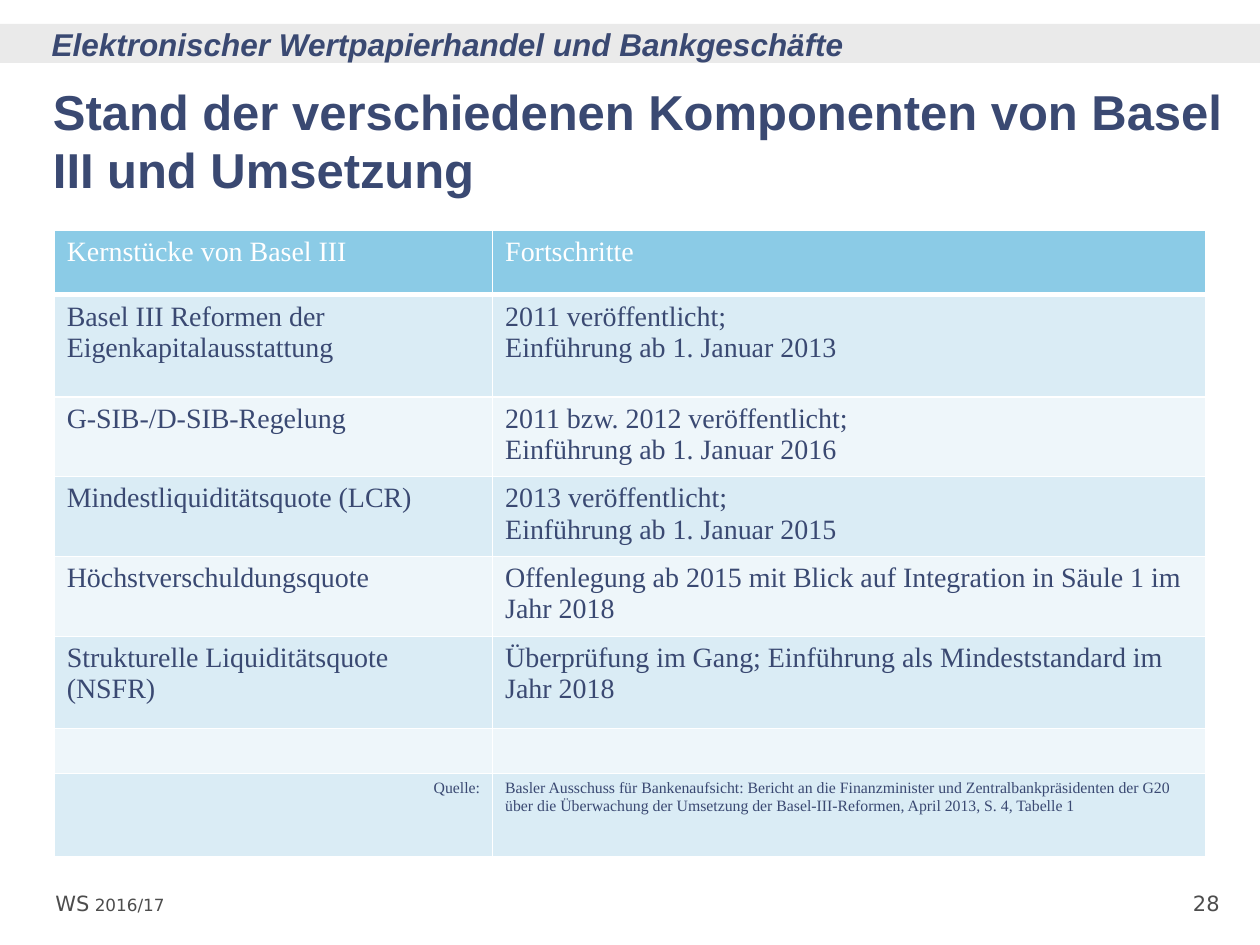
from lxml import etree
from pptx import Presentation
from pptx.dml.color import RGBColor
from pptx.enum.shapes import MSO_SHAPE
from pptx.enum.text import MSO_ANCHOR as ANCHOR, PP_ALIGN as ALIGN
from pptx.oxml.ns import qn
from pptx.util import Inches, Pt

COLORS = {
    "navy": "3A4972", "grey": "4D4D4D", "white": "FFFFFF", "band": "EAEAEA",
    "header": "8BCBE6", "odd": "DAECF5", "even": "EEF6FA",
}
SANS, SERIF, FOOT = "Arial", "Times New Roman", "DejaVu Sans"

ROWS = [
    ("Kernstücke von Basel III", "Fortschritte"),
    ("Basel III Reformen der Eigenkapitalausstattung",
     "2011 veröffentlicht; \vEinführung ab 1. Januar 2013"),
    ("G-SIB-/D-SIB-Regelung",
     "2011 bzw. 2012 veröffentlicht; \vEinführung ab 1. Januar 2016"),
    ("Mindestliquiditätsquote (LCR)",
     "2013 veröffentlicht; \vEinführung ab 1. Januar 2015"),
    ("Höchstverschuldungsquote",
     "Offenlegung ab 2015 mit Blick auf Integration in Säule 1 im Jahr 2018"),
    ("Strukturelle Liquiditätsquote (NSFR)",
     "Überprüfung im Gang; Einführung als Mindeststandard im Jahr 2018"),
    ("", ""),
    ("Quelle:",
     "Basler Ausschuss für Bankenaufsicht: Bericht an die Finanzminister und "
     "Zentralbankpräsidenten der G20 über die Überwachung der Umsetzung der "
     "Basel-III-Reformen, April 2013, S. 4, Tabelle 1"),
]
COL_WIDTHS = [3.48, 5.66]
ROW_HEIGHTS = [0.51, 0.81, 0.6, 0.6, 0.6, 0.73, 0.36, 0.66]


def rgb(name):
    return RGBColor.from_string(COLORS[name])


def format_runs(p, font, size, color, bold=None, italic=None):
    for r in p.runs:
        r.font.name, r.font.size = font, Pt(size)
        r.font.bold, r.font.italic = bold, italic
        r.font.color.rgb = rgb(color)


def add_label(s, box, text, inset, anchor=ANCHOR.TOP):
    tf = s.shapes.add_textbox(*map(Inches, box)).text_frame
    tf.word_wrap = False
    tf.margin_left = tf.margin_right = Inches(inset)
    tf.margin_top = tf.margin_bottom = 0
    tf.vertical_anchor = anchor
    tf.text = text
    return tf.paragraphs[0]


def add_header(s, left, top, width, height):
    band = s.shapes.add_shape(MSO_SHAPE.RECTANGLE, Inches(left), Inches(top),
                              Inches(width), Inches(height))
    band.shadow.inherit = False
    band.fill.solid()
    band.fill.fore_color.rgb = rgb("band")
    band.line.fill.background()
    p = add_label(s, (left + 0.41, top, 7.16, height),
                  "Elektronischer Wertpapierhandel und Bankgeschäfte", 0, ANCHOR.BOTTOM)
    format_runs(p, SANS, 18, "navy", bold=True, italic=True)


def add_title(s, *box):
    title = s.shapes.title
    title.left, title.top, title.width, title.height = map(Inches, box)
    tf = title.text_frame
    tf.text = "Stand der verschiedenen Komponenten von Basel III und Umsetzung"
    tf.vertical_anchor = ANCHOR.MIDDLE
    p = tf.paragraphs[0]
    p.alignment = ALIGN.LEFT
    format_runs(p, SANS, 28, "navy", bold=True)


def set_borders(cell, bottom=1):
    tcPr = cell._tc.get_or_add_tcPr()
    for i, (side, width) in enumerate(zip("LRTB", (1, 1, 1, bottom))):
        ln = etree.Element(qn(f"a:ln{side}"), w=str(Pt(width)))
        fill = etree.SubElement(ln, qn("a:solidFill"))
        etree.SubElement(fill, qn("a:srgbClr"), val=COLORS["white"])
        tcPr.insert(i, ln)


def add_progress_table(s, left, top, width, height):
    table = s.shapes.add_table(len(ROWS), len(COL_WIDTHS), Inches(left), Inches(top),
                               Inches(width), Inches(height)).table
    for col, w in zip(table.columns, COL_WIDTHS):
        col.width = Inches(w)
    last = len(ROWS) - 1
    for i, texts in enumerate(ROWS):
        table.rows[i].height = Inches(ROW_HEIGHTS[i])
        fill = "header" if i == 0 else "odd" if i % 2 else "even"
        for j, text in enumerate(texts):
            cell = table.cell(i, j)
            cell.fill.solid()
            cell.fill.fore_color.rgb = rgb(fill)
            set_borders(cell, bottom=3 if i == 0 else 1)
            if not text:  # lets the blank row stay low
                cell.margin_top = cell.margin_bottom = Inches(0.02)
                continue
            p = cell.text_frame.paragraphs[0]
            p.text = text
            if i == last and j == 0:
                p.alignment = ALIGN.RIGHT
            format_runs(p, SERIF, 9 if i == last else 16,
                        "navy" if i else "white", bold=False)


def add_footer(s, left, top, width, height):
    term = add_label(s, (left, top, 1.2, height), "WS 2016/17", 0.07)
    number = add_label(s, (left + width - 0.55, top, 0.55, height), "28", 0.07)
    number.alignment = ALIGN.RIGHT
    for p in (term, number):
        p.space_before = p.space_after = Pt(2.4)
        format_runs(p, FOOT, 12, "grey")
    term.runs[0].font._element.set("cap", "small")


def main():
    prs = Presentation()
    prs.slide_width, prs.slide_height = Inches(10), Inches(7.5)
    s = prs.slides.add_slide(prs.slide_layouts[5])
    # Running header and title
    add_header(s, 0, 0.19, 10, 0.31)
    add_title(s, 0.32, 0.64, 9.48, 0.94)
    # State of the Basel III components
    add_progress_table(s, 0.43, 1.83, sum(COL_WIDTHS), sum(ROW_HEIGHTS))
    # Term and page number
    add_footer(s, 0.37, 7.07, 9.38, 0.24)
    prs.save("out.pptx")


if __name__ == "__main__":
    main()
